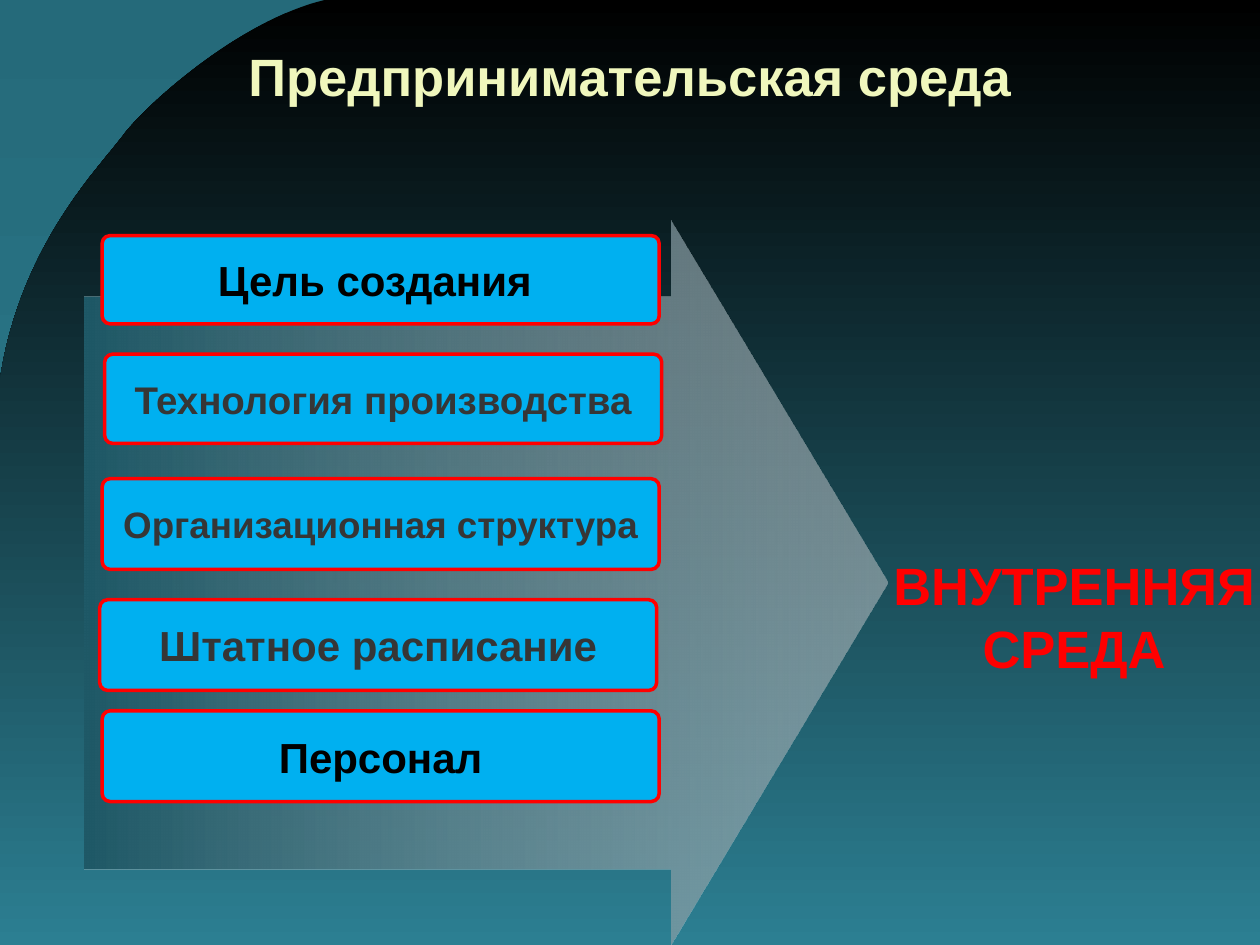
import pptx
import pptx.util
import pptx.dml.color
import pptx.enum.shapes
import pptx.enum.text
import pptx.oxml
import pptx.oxml.ns

Cm = pptx.util.Cm
Pt = pptx.util.Pt
RGB = pptx.dml.color.RGBColor.from_string
SHAPE = pptx.enum.shapes.MSO_SHAPE
NS = pptx.oxml.ns.nsdecls("a")

TITLE = "Предпринимательская среда"
LABEL = "ВНУТРЕННЯЯ СРЕДА"
FACTORS = [
    ("Цель создания ", 2.06, 4.75, 1.78, "strong", "large"),
    ("Технология производства", 2.11, 7.14, 1.8, "soft", "medium"),
    ("Организационная структура", 2.06, 9.65, 1.83, "soft", "small"),
    ("Штатное расписание", 2.01, 12.09, 1.83, "soft", "large"),
    ("Персонал", 2.06, 14.33, 1.83, "strong", "large"),
]
FACTOR_WIDTH = 11.23
CURVE_START = (6.55, 0)
CURVES = [
    ((4.83, 0.41), (2.95, 2.11), (2.49, 2.72)),
    ((2.03, 3.35), (0.41, 4.93), (0, 7.65)),
]
CORNERS = [(0, 19.05), (25.4, 19.05), (25.4, 0)]
THEME = {
    "font": "Arial",
    "back": ("256A7A", "2C7F92"),
    "panel": ("000000", "2C7F92"),
    "arrow": ("1F5967", "B0B8BC"),
    "box": "00B0F0",
    "accent": "FF0000",
    "title": "F0F7BD",
    "strong": "000000",
    "soft": "363636",
    "heading": 30,
    "large": 24,
    "medium": 22,
    "small": 21,
}


def set_gradient(fill, colors, angle):
    fill.gradient()
    fill.gradient_angle = angle
    for stop, color, position in zip(fill.gradient_stops, colors, (0, 1)):
        stop.color.rgb = RGB(color)
        stop.position = position


def bezier(start, curve, steps=40):
    points = (start, *curve)
    for i in range(1, steps + 1):
        t = i / steps
        weights = ((1 - t) ** 3, 3 * t * (1 - t) ** 2, 3 * t * t * (1 - t), t ** 3)
        yield tuple(sum(w * pt[axis] for w, pt in zip(weights, points)) for axis in (0, 1))


def write(s, text, size, color, wrap=True):
    tf = s.text_frame
    tf.word_wrap = wrap
    tf.vertical_anchor = pptx.enum.text.MSO_ANCHOR.MIDDLE
    p = tf.paragraphs[0]
    p.alignment = pptx.enum.text.PP_ALIGN.CENTER
    r = p.add_run()
    r.text = text
    r.font.size = Pt(THEME[size])
    r.font.bold = True
    r.font.color.rgb = RGB(THEME[color])
    r.font.name = THEME["font"]
    return r


def add_panel(slide):
    points = [CURVE_START]
    for curve in CURVES:
        points.extend(bezier(points[-1], curve))
    points += CORNERS
    points = [(Cm(x), Cm(y)) for x, y in points]
    builder = slide.shapes.build_freeform(*points[0])
    builder.add_line_segments(points[1:], close=True)
    s = builder.convert_to_shape()
    s.shadow.inherit = False
    s.line.fill.background()
    set_gradient(s.fill, THEME["panel"], 270)


def add_arrow(slide):
    s = slide.shapes.add_shape(SHAPE.RIGHT_ARROW, Cm(1.7), Cm(4.45), Cm(16.2), Cm(14.6))
    s.adjustments[0], s.adjustments[1] = 0.79, 0.3
    s.shadow.inherit = False
    s.line.fill.background()
    set_gradient(s.fill, THEME["arrow"], 0)
    end_color = s.fill._xPr.findall(".//" + pptx.oxml.ns.qn("a:srgbClr"))[-1]
    end_color.append(pptx.oxml.parse_xml(f'<a:alpha {NS} val="60000"/>'))


def add_factor(slide, text, left, top, height, color, size):
    s = slide.shapes.add_shape(
        SHAPE.ROUNDED_RECTANGLE, Cm(left), Cm(top), Cm(FACTOR_WIDTH), Cm(height)
    )
    s.adjustments[0] = 0.09
    s.shadow.inherit = False
    s.fill.solid()
    s.fill.fore_color.rgb = RGB(THEME["box"])
    s.line.color.rgb = RGB(THEME["accent"])
    s.line.width = Pt(2)
    write(s, text, size, color, wrap=False)


def add_title(slide):
    s = slide.shapes.add_textbox(Cm(1.27), Cm(0.64), Cm(22.86), Cm(1.78))
    r = write(s, TITLE, "heading", "title")
    solid = r.font._rPr.find(pptx.oxml.ns.qn("a:solidFill"))
    solid.addnext(pptx.oxml.parse_xml(
        f'<a:effectLst {NS}><a:outerShdw dist="38100" dir="2700000">'
        '<a:srgbClr val="000000"/></a:outerShdw></a:effectLst>'
    ))


def main():
    prs = pptx.Presentation()
    prs.slide_width, prs.slide_height = Cm(25.4), Cm(19.05)
    slide = prs.slides.add_slide(prs.slide_layouts[6])
    set_gradient(slide.background.fill, THEME["back"], 270)
    add_panel(slide)
    add_arrow(slide)
    for factor in FACTORS:
        add_factor(slide, *factor)
    label = slide.shapes.add_textbox(Cm(17.5), Cm(10.62), Cm(8.31), Cm(3.61))
    write(label, LABEL, "heading", "accent")
    add_title(slide)
    prs.save("out.pptx")


if __name__ == "__main__":
    main()
